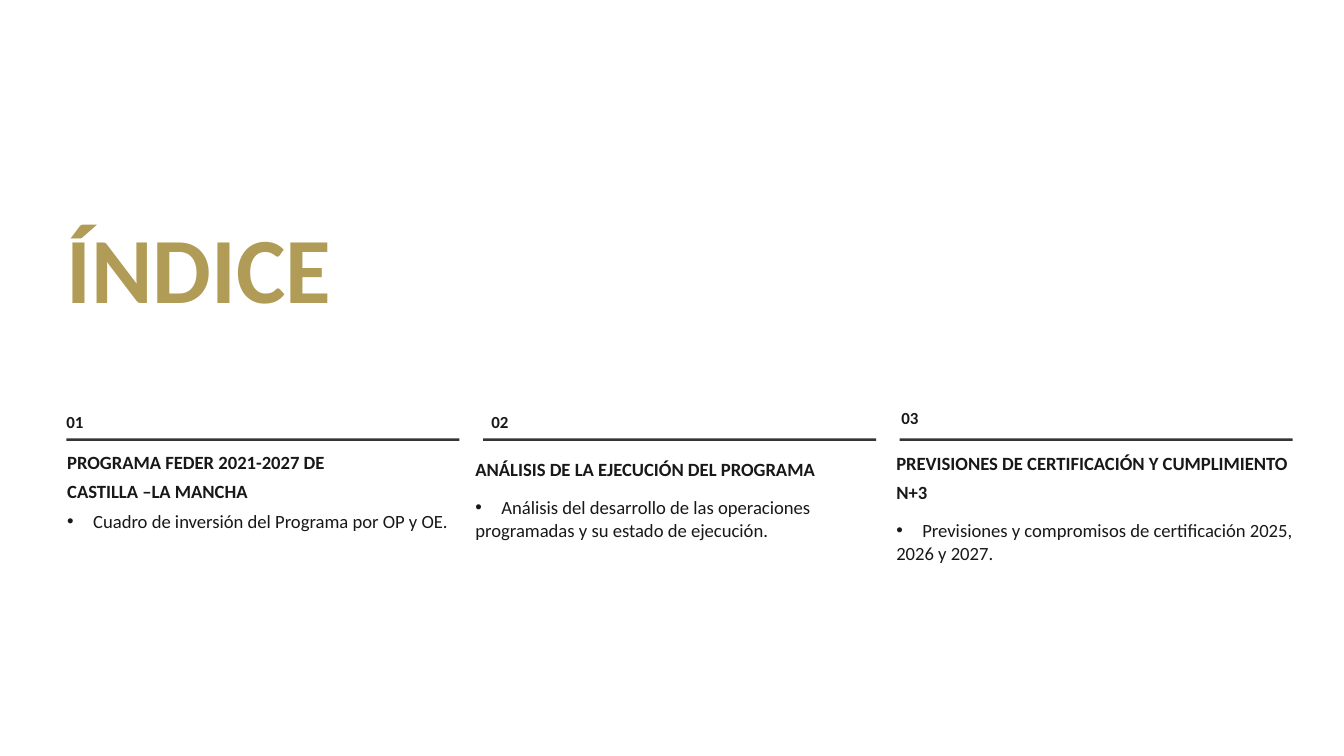
from lxml.etree import SubElement
from pptx import Presentation
from pptx.dml.color import RGBColor
from pptx.enum.shapes import MSO_SHAPE
from pptx.enum.text import PP_ALIGN
from pptx.oxml.ns import qn
from pptx.util import Inches, Pt

COLORS = {"gold": "B09C56", "ink": "181818", "rule": "353535"}
FONT = "Calibri"
TITLE = "ÍNDICE"
SECTIONS = [
    {"number": "01", "number_at": (0.79, 4.95), "body_at": (0.8, 5.29), "body_size": (4.59, 2.97),
     "headings": ["PROGRAMA FEDER 2021-2027 DE", "CASTILLA –LA MANCHA"],
     "details": ["Cuadro de inversión del Programa por OP y OE."],
     "detail_spacing": 25, "gap": 0},
    {"number": "02", "number_at": (5.85, 4.95), "body_at": (5.66, 5.37), "body_size": (4.95, 1.12),
     "headings": ["ANÁLISIS DE LA EJECUCIÓN DEL PROGRAMA"],
     "details": ["Análisis del desarrollo de las operaciones",
                 "programadas y su estado de ejecución."],
     "detail_spacing": None, "gap": 13.5},
    {"number": "03", "number_at": (10.73, 4.91), "body_at": (10.67, 5.3), "body_size": (4.95, 3.13),
     "headings": ["PREVISIONES DE CERTIFICACIÓN Y CUMPLIMIENTO N+3"],
     "details": ["Previsiones y compromisos de certificación 2025,", "2026 y 2027."],
     "detail_spacing": None, "gap": 13.5},
]
RULE_LEFT, RULE_TOP, RULE_WIDTH, RULE_HEIGHT, RULE_STEP = 0.79, 5.22, 4.68, 0.03, 4.96
BULLET_INDENT = 0.31


def add_frame(slide, at, size):
    frame = slide.shapes.add_textbox(*map(Inches, at + size)).text_frame
    frame.margin_left = frame.margin_top = frame.margin_right = frame.margin_bottom = 0
    frame.word_wrap = False
    return frame


def write(paragraph, text, size, color, bold=True, spacing=None, bullet=False):
    paragraph.text = text
    paragraph.alignment = PP_ALIGN.LEFT
    if spacing:
        paragraph.line_spacing = Pt(spacing)
    if bullet:
        properties = paragraph._p.get_or_add_pPr()
        properties.set("marL", str(Inches(BULLET_INDENT)))
        properties.set("indent", str(-Inches(BULLET_INDENT)))
        SubElement(properties, qn("a:buFont"), typeface="Arial")
        SubElement(properties, qn("a:buChar"), char="•")
    font = paragraph.runs[0].font
    font.name, font.size, font.bold = FONT, Pt(size), bold
    font.color.rgb = RGBColor.from_string(COLORS[color])


def add_section(slide, index, section):
    number = add_frame(slide, section["number_at"], (0.41, 0.2))
    write(number.paragraphs[0], section["number"], 14.5, "ink", spacing=13.5)

    rule = slide.shapes.add_shape(
        MSO_SHAPE.RECTANGLE, Inches(RULE_LEFT + index * RULE_STEP), Inches(RULE_TOP),
        Inches(RULE_WIDTH), Inches(RULE_HEIGHT))
    rule.shadow.inherit = False
    rule.fill.solid()
    rule.fill.fore_color.rgb = RGBColor.from_string(COLORS["rule"])
    rule.line.fill.background()

    body = add_frame(slide, section["body_at"], section["body_size"])
    for position, heading in enumerate(section["headings"]):
        paragraph = body.add_paragraph() if position else body.paragraphs[0]
        write(paragraph, heading, 16, "ink", spacing=25)
    for position, detail in enumerate(section["details"]):
        paragraph = body.add_paragraph()
        if position == 0 and section["gap"]:
            paragraph.space_before = Pt(section["gap"])
        write(paragraph, detail, 16, "ink", bold=False,
              spacing=section["detail_spacing"], bullet=position == 0)


def main():
    """Build the index slide with its three numbered sections."""
    deck = Presentation()
    deck.slide_width, deck.slide_height = Inches(16), Inches(9)
    slide = deck.slides.add_slide(deck.slide_layouts[6])
    title = add_frame(slide, (0.79, 1.72), (14.42, 2.12))
    write(title.paragraphs[0], TITLE, 80, "gold", spacing=152)
    for index, section in enumerate(SECTIONS):
        add_section(slide, index, section)
    deck.save("out.pptx")


if __name__ == "__main__":
    main()
